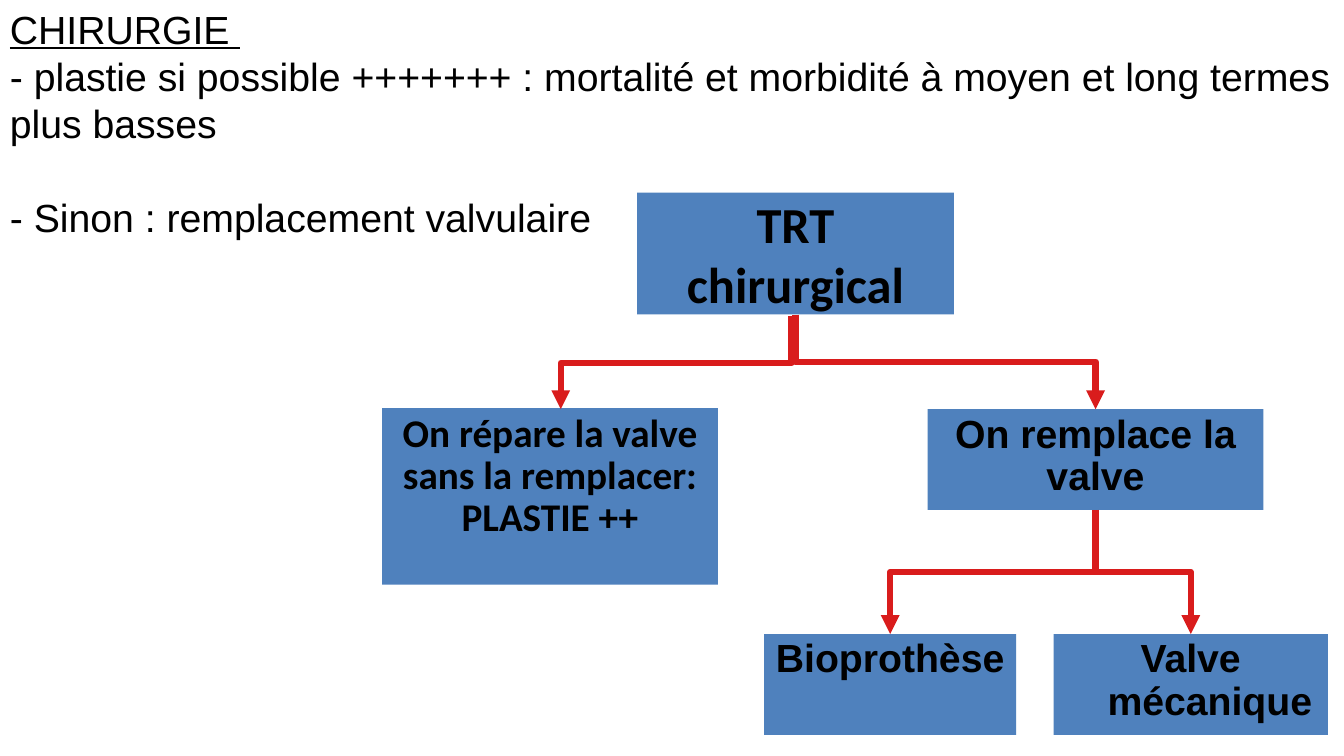
"""Build the slide on surgical treatment: valve repair or replacement."""
from dataclasses import dataclass

from lxml.etree import SubElement
from pptx import Presentation
from pptx.dml.color import RGBColor
from pptx.enum.shapes import MSO_CONNECTOR, MSO_SHAPE
from pptx.enum.text import MSO_ANCHOR, MSO_AUTO_SIZE, PP_ALIGN
from pptx.oxml.ns import qn
from pptx.shapes.base import BaseShape
from pptx.slide import Slide
from pptx.text.text import TextFrame, _Paragraph
from pptx.util import Inches, Pt

BLUE = RGBColor(0x4F, 0x81, 0xBD)
RED = RGBColor(0xD9, 0x1C, 0x1C)
BLACK = RGBColor(0, 0, 0)
WIDTH, HEIGHT = Inches(13.33), Inches(7.5)


@dataclass(frozen=True)
class Box:
    """A filled box, placed in percent of the slide's size."""
    text: str
    x: float
    y: float
    w: float
    h: float
    font: str = "Arial"
    hanging: float = 0


@dataclass(frozen=True)
class Link:
    """An elbow arrow between two boxes, with end offsets in percent."""
    parent: Box
    child: Box
    start: tuple[float, float] = (0, 0)
    end: tuple[float, float] = (0, 0)


@dataclass(frozen=True)
class Line:
    """A paragraph of the introduction."""
    text: str
    underline: bool = False
    before: float = 0


TITLE = Box("TRT chirurgical", 47.41, 25.47, 23.56, 16.13, "Calibri")
REPAIR = Box("On répare la valve sans la remplacer: PLASTIE ++",
             28.43, 54, 24.98, 23.33, "Calibri")
REPLACE = Box("On remplace la valve", 69.02, 54.13, 24.98, 13.33)
BIO = Box("Bioprothèse", 56.86, 83.87, 18.75, 13.33, hanging=0.38)
MECHANICAL = Box("Valve mécanique", 78.39, 83.87, 20.41, 13.33, hanging=0.38)
LINKS = (
    Link(TITLE, REPAIR, (-0.3, 0.27), (0.8, 0.13)),
    Link(TITLE, REPLACE),
    Link(REPLACE, BIO),
    Link(REPLACE, MECHANICAL),
)
INTRO = (
    Line("CHIRURGIE ", underline=True),
    Line("- plastie si possible +++++++ : mortalité et morbidité "
         "à moyen et long termes plus basses"),
    Line("- Sinon : remplacement valvulaire", before=33.6),
)


def px(share: float) -> int:
    """Turn a percentage of the slide's width into a length."""
    return round(WIDTH * share / 100)


def py(share: float) -> int:
    """Turn a percentage of the slide's height into a length."""
    return round(HEIGHT * share / 100)


def add_run(p: _Paragraph, text: str, font: str, size: float,
            bold: bool = False, underline: bool = False) -> None:
    """Add one black run to a paragraph."""
    r = p.add_run()
    r.text = text
    r.font.name, r.font.size = font, Pt(size)
    r.font.bold, r.font.underline = bold, underline
    r.font.color.rgb = BLACK


def fill_box(sp: BaseShape, box: Box, size: float) -> TextFrame:
    """Fill a shape and write its centred bold text."""
    sp.fill.solid()
    sp.fill.fore_color.rgb = BLUE
    sp.line.fill.background()
    tf = sp.text_frame
    tf.word_wrap, tf.auto_size = True, MSO_AUTO_SIZE.NONE
    p = tf.paragraphs[0]
    p.alignment = PP_ALIGN.CENTER
    add_run(p, box.text, box.font, size, bold=True)
    return tf


def set_title(s: Slide, box: Box) -> None:
    """Place and format the title placeholder."""
    sp = s.shapes.title
    sp.left, sp.top, sp.width, sp.height = px(box.x), py(box.y), px(box.w), py(box.h)
    fill_box(sp, box, 36).vertical_anchor = MSO_ANCHOR.MIDDLE


def add_box(s: Slide, box: Box) -> None:
    """Draw one box of the tree."""
    sp = s.shapes.add_shape(MSO_SHAPE.RECTANGLE, px(box.x), py(box.y), px(box.w), py(box.h))
    sp.shadow.inherit = False
    tf = fill_box(sp, box, 28)
    tf.vertical_anchor = MSO_ANCHOR.TOP
    p = tf.paragraphs[0]
    p.line_spacing = 0.9
    if box.hanging:
        pPr = p._p.get_or_add_pPr()
        pPr.set("marL", str(Inches(box.hanging)))
        pPr.set("indent", str(-Inches(box.hanging)))


def add_link(s: Slide, link: Link) -> None:
    """Draw an elbow arrow from the foot of a box to the head of another."""
    a, b = link.parent, link.child
    x1, y1 = px(a.x + a.w / 2 + link.start[0]), py(a.y + a.h + link.start[1])
    x2, y2 = px(b.x + b.w / 2 + link.end[0]), py(b.y + link.end[1])
    w, h = y2 - y1, abs(x2 - x1)
    left, top = (x1 + x2 - w) // 2, (y1 + y2 - h) // 2
    cn = s.shapes.add_connector(MSO_CONNECTOR.ELBOW, left, top, left + w, top + h)
    cn.line.color.rgb = RED
    cn.line.width = Pt(4.5)
    spPr = cn._element.spPr
    xfrm = spPr.find(qn("a:xfrm"))
    xfrm.set("rot", str((270 if x2 > x1 else 90) * 60000))
    if x2 > x1:
        xfrm.set("flipH", "1")
    SubElement(spPr.find(qn("a:ln")), qn("a:tailEnd"), type="triangle")
    SubElement(spPr, qn("a:effectLst"))


def add_intro(s: Slide) -> None:
    """Write the introduction across the top of the slide."""
    tf = s.shapes.add_textbox(0, 0, WIDTH, py(32.8)).text_frame
    tf.word_wrap = True
    for i, line in enumerate(INTRO):
        p = tf.add_paragraph() if i else tf.paragraphs[0]
        if line.before:
            p.space_before = Pt(line.before)
        add_run(p, line.text, "Arial", 28, underline=line.underline)


def main() -> None:
    """Build and save the presentation."""
    prs = Presentation()
    prs.slide_width, prs.slide_height = WIDTH, HEIGHT
    s = prs.slides.add_slide(prs.slide_layouts[5])
    set_title(s, TITLE)
    for box in (REPAIR, REPLACE, BIO, MECHANICAL):
        add_box(s, box)
    for link in LINKS:
        add_link(s, link)
    add_intro(s)
    prs.save("out.pptx")


if __name__ == "__main__":
    main()
